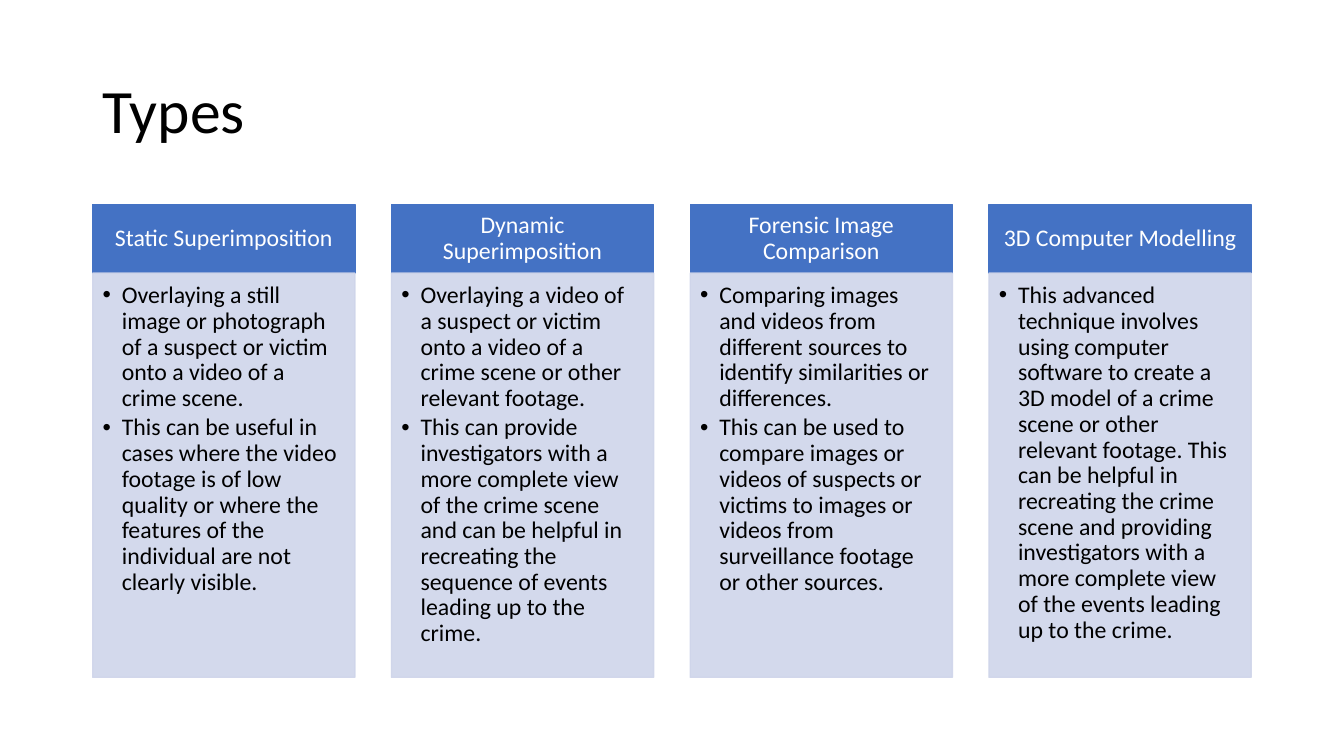
from lxml.etree import SubElement
from pptx import Presentation
from pptx.dml.color import RGBColor
from pptx.enum.shapes import MSO_SHAPE
from pptx.enum.text import MSO_ANCHOR, PP_ALIGN
from pptx.oxml.ns import qn
from pptx.util import Inches, Pt

# Column grid, in inches
LEFT, COLUMN_WIDTH, COLUMN_STEP = 0.92, 2.6, 2.963
HEAD_TOP, HEAD_HEIGHT, BODY_HEIGHT = 2.03, 0.68, 4.01
HANGING = 0.19
BLUE, PALE, BLACK, WHITE = "4472C4", "CFD5EA", "000000", "FFFFFF"

TYPES = [
    ("Static Superimposition", [
        "Overlaying a still image or photograph of a suspect or victim onto a video of a crime scene.",
        "This can be useful in cases where the video footage is of low quality or where the features "
        "of the individual are not clearly visible.",
    ]),
    ("Dynamic Superimposition", [
        "Overlaying a video of a suspect or victim onto a video of a crime scene or other relevant footage.",
        "This can provide investigators with a more complete view of the crime scene and can be helpful "
        "in recreating the sequence of events leading up to the crime.",
    ]),
    ("Forensic Image Comparison", [
        "Comparing images and videos from different sources to identify similarities or differences.",
        "This can be used to compare images or videos of suspects or victims to images or videos from "
        "surveillance footage or other sources.",
    ]),
    ("3D Computer Modelling", [
        "This advanced technique involves using computer software to create a 3D model of a crime scene "
        "or other relevant footage. This can be helpful in recreating the crime scene and providing "
        "investigators with a more complete view of the events leading up to the crime.",
    ]),
]


def paint(target, color, opacity=100):
    """Give a fill a solid colour, see-through when opacity is below 100."""
    target.solid()
    target.fore_color.rgb = RGBColor.from_string(color)
    if opacity < 100:
        for tone in target._xPr.iter(qn("a:srgbClr")):
            SubElement(tone, qn("a:alpha"), val=str(opacity * 1000))


def add_bullet(para):
    properties = para._p.get_or_add_pPr()
    properties.set("marL", str(Inches(HANGING)))
    properties.set("indent", str(-Inches(HANGING)))
    SubElement(properties, qn("a:buFont"), typeface="Arial")
    SubElement(properties, qn("a:buChar"), char="•")


def write(box, texts, size=17, color=BLACK, align=PP_ALIGN.LEFT, anchor=MSO_ANCHOR.MIDDLE,
          insets=(0.1, 0.05, 0.1, 0.05), bullets=False, after=0):
    frame = box.text_frame
    frame.word_wrap = True
    frame.vertical_anchor = anchor
    frame.margin_left, frame.margin_top, frame.margin_right, frame.margin_bottom = map(Inches, insets)
    for index, text in enumerate(texts):
        para = frame.add_paragraph() if index else frame.paragraphs[0]
        if bullets:
            add_bullet(para)
        para.alignment = align
        para.line_spacing = 0.9
        para.space_after = Pt(after)
        span = para.add_run()
        span.text = text
        span.font.name = "Calibri"
        span.font.size = Pt(size)
        span.font.color.rgb = RGBColor.from_string(color)


def add_panel(page, left, top, height, color, opacity=100):
    panel = page.shapes.add_shape(MSO_SHAPE.RECTANGLE, Inches(left), Inches(top),
                                  Inches(COLUMN_WIDTH), Inches(height))
    panel.shadow.inherit = False
    paint(panel.fill, color, opacity)
    paint(panel.line.fill, color, opacity)
    panel.line.width = Pt(1)
    return panel


def add_column(page, left, heading, points):
    head = add_panel(page, left, HEAD_TOP, HEAD_HEIGHT, BLUE)
    write(head, [heading], color=WHITE, align=PP_ALIGN.CENTER, insets=(0.13, 0.08, 0.13, 0.08))
    body = add_panel(page, left, HEAD_TOP + HEAD_HEIGHT, BODY_HEIGHT, PALE, opacity=90)
    write(body, points, anchor=MSO_ANCHOR.TOP, insets=(0.1, 0.1, 0.13, 0.15), bullets=True, after=2.55)


def main():
    deck = Presentation()
    deck.slide_width, deck.slide_height = Inches(13.33), Inches(7.5)
    page = deck.slides.add_slide(deck.slide_layouts[6])

    # Title
    title = page.shapes.add_textbox(Inches(LEFT), Inches(0.4), Inches(11.5), Inches(1.45))
    write(title, ["Types"], size=44)

    # One column for each type
    for index, (heading, points) in enumerate(TYPES):
        add_column(page, LEFT + index * COLUMN_STEP, heading, points)

    deck.save("out.pptx")


if __name__ == "__main__":
    main()
